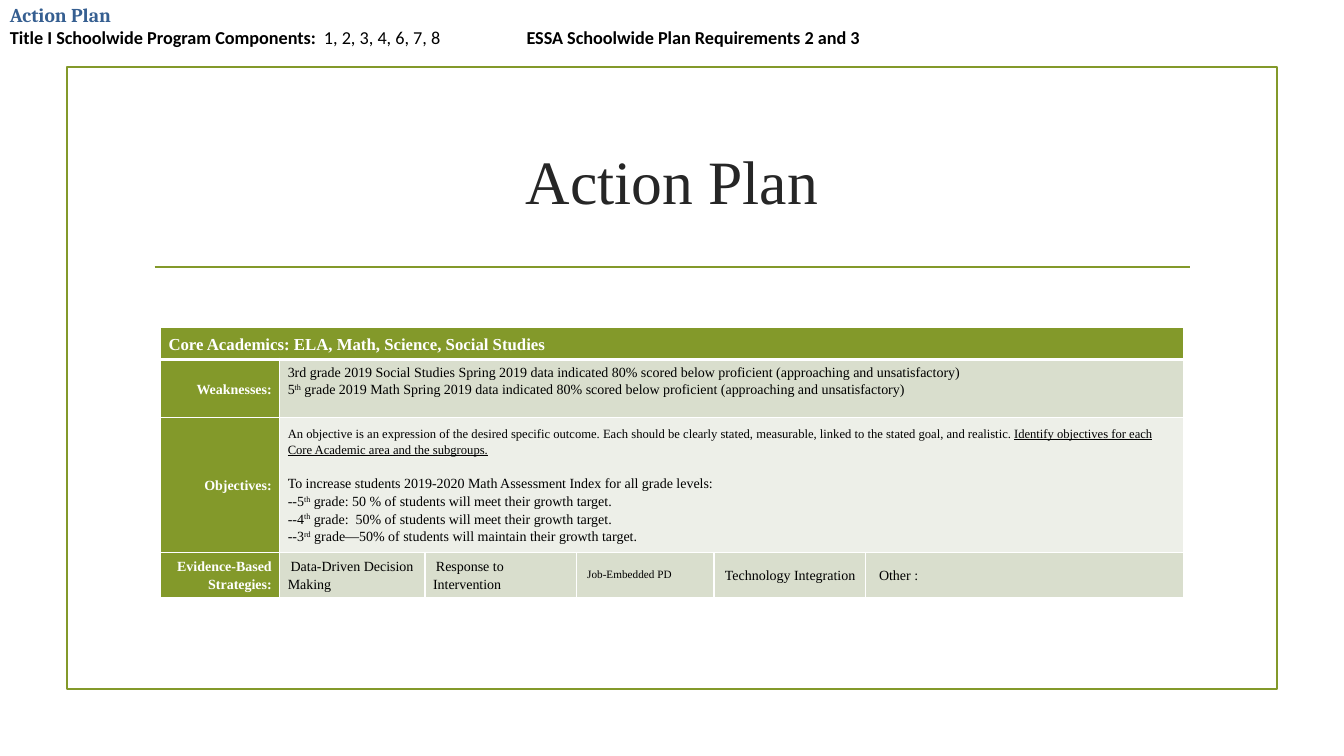
import pptx
import pptx.util
import pptx.dml.color
import pptx.enum.shapes
import pptx.enum.text
import pptx.oxml
import pptx.oxml.ns

COLORS = {
    "green": "83992A", "sage": "D9DECD", "pale": "EDEFE8", "white": "FFFFFF",
    "black": "000000", "dark": "262626", "blue": "365F91",
}
# Grid of 160 columns by 90 rows covering the slide
UNIT = pptx.util.Inches(1 / 12)
SERIF = "Times New Roman"
ALIGN = pptx.enum.text.PP_ALIGN
ANCHOR = pptx.enum.text.MSO_ANCHOR
SUP = {"base": 30000}


def grid(*cells):
    return [round(n * UNIT) for n in cells]


def color(name):
    return pptx.dml.color.RGBColor.from_string(COLORS[name])


def node(parent, tag, **attrs):
    child = pptx.oxml.parse_xml(f"<{tag} {pptx.oxml.ns.nsdecls('a')}/>")
    for key, value in attrs.items():
        child.set(key, str(value))
    parent.append(child)
    return child


def write(para, runs, size=10, font=SERIF, ink="black", bold=False, align=ALIGN.LEFT,
          space=None, before=None, indent=0, tab=None):
    """Fill a paragraph; each run is a string or a (string, changes) pair."""
    props = para._p.get_or_add_pPr()
    if tab:
        node(node(props, "a:tabLst"), "a:tab", pos=grid(tab)[0], algn="l")
    if indent:
        props.set("indent", str(grid(indent)[0]))
    para.alignment = align
    if space:
        para.line_spacing = space
    if before:
        para.space_before = pptx.util.Pt(before)
    for item in [runs] if isinstance(runs, str) else runs:
        words, change = (item, {}) if isinstance(item, str) else item
        run = para.add_run()
        run.text = words
        face = run.font
        face.name = font
        face.size = pptx.util.Pt(change.get("size", size))
        face.bold = change.get("bold", bold)
        face.color.rgb = color(ink)
        if change.get("under"):
            face.underline = True
        if "base" in change:
            run._r.get_or_add_rPr().set("baseline", str(change["base"]))


def fill_text(frame, paras, **base):
    """Write (runs, format) pairs as the paragraphs of a text frame."""
    for i, (runs, extra) in enumerate(paras):
        para = frame.add_paragraph() if i else frame.paragraphs[0]
        write(para, runs, **{**base, **extra})


def text_box(slide, place, paras, **base):
    frame = slide.shapes.add_textbox(*grid(*place)).text_frame
    frame.word_wrap = True
    frame.vertical_anchor = ANCHOR.MIDDLE
    fill_text(frame, paras, **base)
    return frame


def stroke(shape):
    shape.line.color.rgb = color("green")
    shape.line.width = pptx.util.Pt(1.25)


def add_frame(slide):
    rect = slide.shapes.add_shape(pptx.enum.shapes.MSO_SHAPE.RECTANGLE, *grid(8, 8, 144, 74))
    rect.shadow.inherit = False
    rect.fill.background()
    stroke(rect)


def add_rule(slide):
    rule = slide.shapes.add_connector(
        pptx.enum.shapes.MSO_CONNECTOR.STRAIGHT, *grid(18.4, 31.8, 141.7, 31.8))
    stroke(rule)
    node(rule._element.spPr, "a:effectLst")


def style(cell, fill, top, bottom):
    props = cell._tc.get_or_add_tcPr()
    for side, width in zip("LRTB", (1, 1, top, bottom)):
        edge = node(props, f"a:ln{side}", w=pptx.util.Pt(width))
        node(node(edge, "a:solidFill"), "a:srgbClr", val=COLORS["white"])
    cell.fill.solid()
    cell.fill.fore_color.rgb = color(fill)
    cell.margin_left = cell.margin_right = pptx.util.Inches(0.08)
    cell.margin_top = cell.margin_bottom = pptx.util.Inches(0.03)
    cell.vertical_anchor = ANCHOR.MIDDLE


def add_plan(slide):
    cols = grid(14.2, 17.3, 18, 16.4, 18, 37.9)
    rows = grid(3.8, 6.9, 15.1, 4.9)
    table = slide.shapes.add_table(
        len(rows), len(cols), *grid(19.1, 39), sum(cols), sum(rows)).table
    for col, width in zip(table.columns, cols):
        col.width = width
    for row, height in zip(table.rows, rows):
        row.height = height

    # Cell fills and borders
    for r, fill in enumerate(("green", "sage", "pale", "sage")):
        for c in range(len(cols)):
            style(table.cell(r, c), fill if c else "green",
                  3 if r == 1 else 1, 1 if r else 3)
    for r, first in enumerate((0, 1, 1)):
        table.cell(r, first).merge(table.cell(r, len(cols) - 1))

    def put(r, c, paras, **base):
        fill_text(table.cell(r, c).text_frame, paras, **{"space": 1.15, **base})

    # Heading and row labels
    put(0, 0, [("Core Academics: ELA, Math, Science, Social Studies", {})],
        size=12, ink="white", bold=True)
    for r, label in enumerate(("Weaknesses:", "Objectives:", "Evidence-Based Strategies:"), 1):
        put(r, 0, [(label, {})], ink="white", bold=True, align=ALIGN.RIGHT)

    # Weaknesses
    found = " Spring 2019 data indicated 80% scored below proficient (approaching and unsatisfactory)"
    table.cell(1, 1).vertical_anchor = ANCHOR.TOP
    put(1, 1, [
        ("3rd grade 2019 Social Studies" + found, {}),
        (["5", ("th", SUP), " grade 2019 Math" + found], {}),
    ])

    # Objectives
    goals = (
        ("5", "th", " grade: 50 % of students will meet"),
        ("4", "th", " grade:  50% of students will meet"),
        ("3", "rd", " grade—50% of students will maintain"),
    )
    put(2, 1, [
        (["An objective is an expression of the desired specific outcome. Each should be clearly "
          "stated, measurable, linked to the stated goal, and realistic. ",
          ("Identify objectives for each Core Academic area and the subgroups.",
           {"under": True})], {"size": 9}),
        ("To increase students 2019-2020 Math Assessment Index for all grade levels:",
         {"before": 12}),
    ] + [(["--" + num, (end, SUP), rest + " their growth target."], {})
         for num, end, rest in goals])

    # Strategies
    plans = (
        ("Data-Driven Decision Making", {}),
        ("Response to Intervention", {}),
        ("Job-Embedded PD", {"size": 8, "space": None}),
        ("Technology Integration", {}),
        ("Other :", {"indent": 0.7}),
    )
    for c, plan in enumerate(plans, 1):
        put(3, c, [plan], indent=0.35)


def main():
    deck = pptx.Presentation()
    deck.slide_width, deck.slide_height = grid(160, 90)
    slide = deck.slides.add_slide(deck.slide_layouts[6])

    # Border, title and rule
    add_frame(slide)
    add_rule(slide)
    text_box(slide, (17, 12.8, 126, 17.2), [("Action Plan", {})],
             size=44, ink="dark", align=ALIGN.CENTER)

    add_plan(slide)

    # Page header
    head = text_box(slide, (0, 0, 160, 6), [
        ("Action Plan", {"size": 14, "font": "Cambria", "ink": "blue"}),
        (["Title I Schoolwide Program Components:  ",
          ("1, 2, 3, 4, 6, 7, 8", {"bold": False}),
          "\tESSA Schoolwide Plan Requirements 2 and 3"], {"tab": 61.5}),
    ], size=13, font="Calibri", bold=True)
    head.auto_size = pptx.enum.text.MSO_AUTO_SIZE.SHAPE_TO_FIT_TEXT

    deck.save("out.pptx")


if __name__ == "__main__":
    main()
